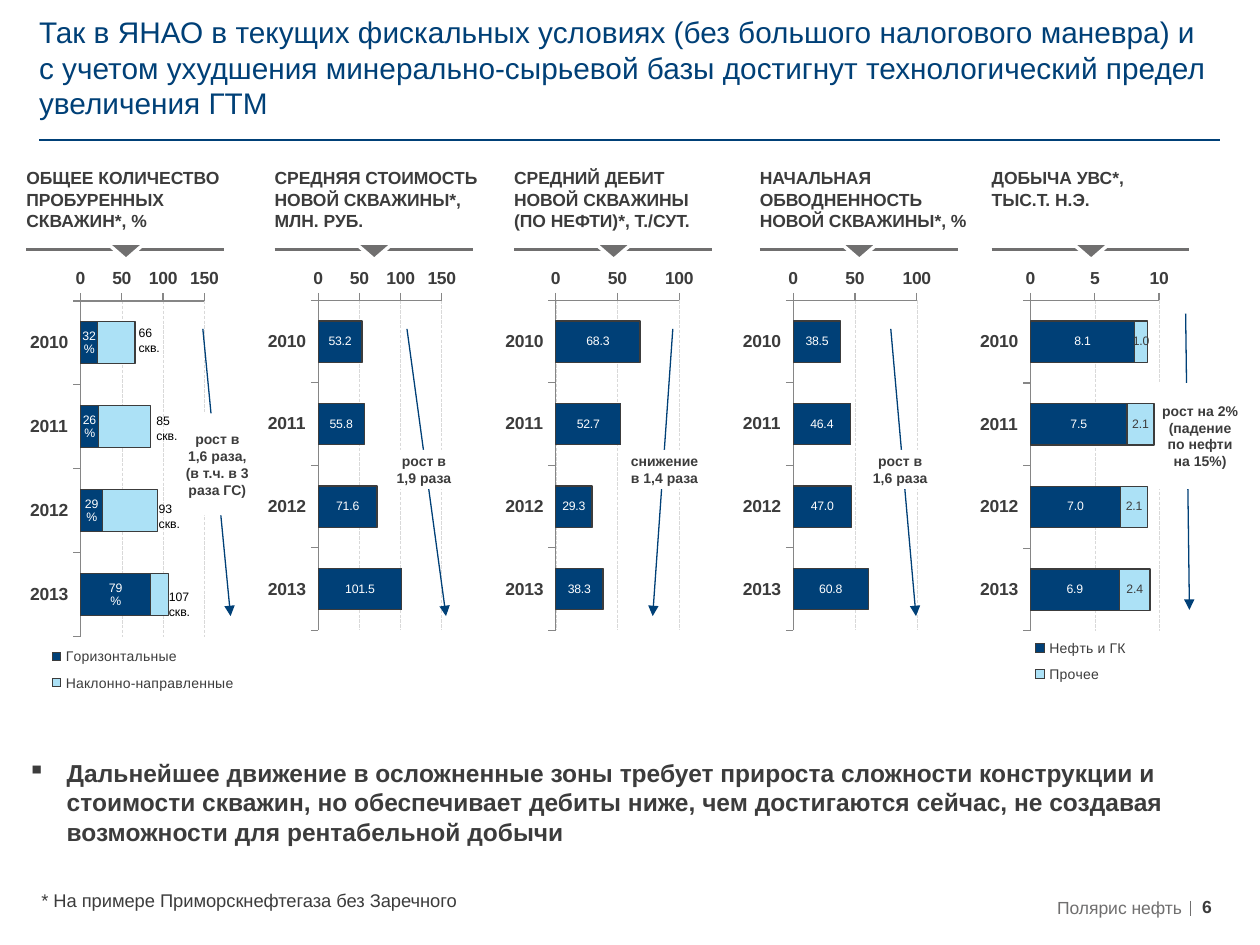
"""Build the slide on drilling results with five bar charts and a conclusion."""
from lxml.etree import SubElement
from pptx import Presentation
from pptx.chart.data import CategoryChartData
from pptx.dml.color import RGBColor
from pptx.enum.chart import XL_CHART_TYPE, XL_LEGEND_POSITION, XL_TICK_MARK
from pptx.enum.dml import MSO_LINE
from pptx.enum.shapes import MSO_CONNECTOR, MSO_SHAPE
from pptx.enum.text import MSO_ANCHOR, MSO_AUTO_SIZE, PP_ALIGN
from pptx.oxml import parse_xml
from pptx.oxml.ns import nsdecls, qn
from pptx.util import Inches, Pt

NAVY, SKY, DARK, GREY, WHITE = "004077", "ACE1F6", "3C3C3C", "706F6F", "FFFFFF"
YEARS = ["2010", "2011", "2012", "2013"]


def color(value):
    return RGBColor.from_string(value)


def write(shape, text, size=10, ink=DARK, bold=False, align=PP_ALIGN.LEFT,
          anchor=MSO_ANCHOR.TOP, margins=(0, 0)):
    frame = shape.text_frame
    frame.text = text
    frame.word_wrap = True
    frame.auto_size = MSO_AUTO_SIZE.NONE
    frame.vertical_anchor = anchor
    frame.margin_left = frame.margin_right = Inches(margins[0])
    frame.margin_top = frame.margin_bottom = Inches(margins[1])
    for paragraph in frame.paragraphs:
        paragraph.alignment = align
        for run in paragraph.runs:
            run.font.name = "Arial"
            run.font.size = Pt(size)
            run.font.bold = bold
            run.font.color.rgb = color(ink)
    return frame


panels = [
    dict(heading="ОБЩЕЕ КОЛИЧЕСТВО ПРОБУРЕННЫХ СКВАЖИН*, %", left=0.21,
         series=[("Горизонтальные", [21, 22, 27, 85]),
                 ("Наклонно-направленные", [45, 63, 66, 22])],
         shares=["32\n%", "26\n%", "29\n%", "79\n%"], maximum=150, step=50,
         plot=(0.293, 0.073, 0.556, 0.753), legend=(0.15, 0.83, 0.85, 0.14),
         arrow=(1.61, 2.61, 1.83, 4.89), box=(1.43, 3.28, 0.59, 0.81),
         trend="рост в 1,6 раза, (в т.ч. в 3 раза ГС)"),
    dict(heading="СРЕДНЯЯ СТОИМОСТЬ НОВОЙ СКВАЖИНЫ*, МЛН. РУБ.", left=2.18,
         series=[("Стоимость", [53.2, 55.8, 71.6, 101.5])], maximum=150, step=50,
         arrow=(3.23, 2.61, 3.54, 4.89), box=(3.07, 3.57, 0.59, 0.31),
         trend="рост в 1,9 раза"),
    dict(heading="СРЕДНИЙ ДЕБИТ НОВОЙ СКВАЖИНЫ (ПО НЕФТИ)*, Т./СУТ.", left=4.08,
         series=[("Дебит", [68.3, 52.7, 29.3, 38.3])], maximum=100, step=50,
         arrow=(5.34, 2.61, 5.18, 4.89), box=(4.96, 3.57, 0.63, 0.31),
         trend="снижение в 1,4 раза"),
    dict(heading="НАЧАЛЬНАЯ ОБВОДНЕННОСТЬ НОВОЙ СКВАЖИНЫ*, %", left=6.03,
         series=[("Обводненность", [38.5, 46.4, 47.0, 60.8])], maximum=100, step=50,
         arrow=(7.07, 2.61, 7.27, 4.89), box=(6.85, 3.57, 0.59, 0.31),
         trend="рост в 1,6 раза"),
    dict(heading="ДОБЫЧА УВС*,\nТЫС.Т. Н.Э.", left=7.87,
         series=[("Нефть и ГК", [8.1, 7.5, 7.0, 6.9]),
                 ("Прочее", [1.0, 2.1, 2.1, 2.4])], maximum=10, step=5,
         plot=(0.293, 0.067, 0.577, 0.745), legend=(0.27, 0.81, 0.5, 0.14),
         arrow=(9.41, 2.49, 9.44, 4.84), box=(9.17, 3.04, 0.71, 0.84),
         trend="рост на 2% (падение по нефти на 15%)"),
]

presentation = Presentation()
presentation.slide_width, presentation.slide_height = Inches(10), Inches(7.5)
slide = presentation.slides.add_slide(presentation.slide_layouts[5])
shapes = slide.shapes

title = shapes.title
title.left, title.top, title.width, title.height = map(Inches, (0.31, 0.29, 9.36, 0.67))
write(title, "Так в ЯНАО в текущих фискальных условиях (без большого налогового маневра) "
      "и с учетом ухудшения минерально-сырьевой базы достигнут технологический предел "
      "увеличения ГТМ", size=17, ink=NAVY, anchor=MSO_ANCHOR.BOTTOM)

for index, panel in enumerate(panels):
    data = CategoryChartData()
    data.categories = YEARS
    for name, values in panel["series"]:
        data.add_series(name, values)
    chart_box = map(Inches, (0.12 + 1.885 * index, 2.13, 1.77, 3.54))
    chart = shapes.add_chart(XL_CHART_TYPE.BAR_STACKED, *chart_box, data).chart
    chart.has_title = False
    chart.font.name, chart.font.size = "Arial", Pt(10)
    chart.font.color.rgb = color(DARK)

    category_axis, value_axis = chart.category_axis, chart.value_axis
    category_axis.reverse_order = True
    value_axis.minimum_scale, value_axis.maximum_scale = 0, panel["maximum"]
    value_axis.major_unit = panel["step"]
    for axis in (category_axis, value_axis):
        axis.major_tick_mark = XL_TICK_MARK.OUTSIDE
        axis.minor_tick_mark = XL_TICK_MARK.NONE
        axis.tick_labels.font.bold = True
        axis.tick_labels.font.size = Pt(10)
        axis.format.line.color.rgb = color("868686")
        axis.format.line.width = Pt(0.75)
    grid = value_axis.major_gridlines.format.line
    grid.color.rgb = color("D9D9D9")
    grid.width = Pt(0.25)
    grid.dash_style = MSO_LINE.LONG_DASH

    chart.plots[0].gap_width, chart.plots[0].overlap = 100, 100
    shares = panel.get("shares", [])
    for series, fill, ink in zip(chart.plots[0].series, (NAVY, SKY), (WHITE, DARK)):
        series.format.fill.solid()
        series.format.fill.fore_color.rgb = color(fill)
        series.format.line.color.rgb = color(DARK)
        series.format.line.width = Pt(0.75)
        if shares and fill == SKY:
            continue
        labels = series.data_labels
        labels.show_value = True
        labels.number_format, labels.number_format_is_linked = "0.0", False
        labels.font.size = Pt(7)
        labels.font.color.rgb = color(ink)
        for number, share in enumerate(shares):
            frame = series.points[number].data_label.text_frame
            frame.text = share
            for paragraph in frame.paragraphs:
                for run in paragraph.runs:
                    run.font.size = Pt(7)
                    run.font.color.rgb = color(ink)

    plot_area = chart._chartSpace.chart.plotArea
    layouts = [(plot_area, 0, panel.get("plot", (0.294, 0.067, 0.554, 0.744)))]
    chart.has_legend = "legend" in panel
    if chart.has_legend:
        chart.legend.position = XL_LEGEND_POSITION.BOTTOM
        chart.legend.include_in_layout = False
        chart.legend.font.size = Pt(8)
        layouts.append((chart.legend._element, 1, panel["legend"]))
    for element, place, numbers in layouts:
        for old in element.findall(qn("c:layout")):
            element.remove(old)
        target = '<c:layoutTarget val="inner"/>' if element is plot_area else ""
        modes = '<c:xMode val="edge"/><c:yMode val="edge"/>'
        sizes = "".join(f'<c:{key} val="{number}"/>' for key, number in zip("xywh", numbers))
        element.insert(place, parse_xml(
            f'<c:layout {nsdecls("c")}><c:manualLayout>{target}{modes}{sizes}'
            "</c:manualLayout></c:layout>"))

wells = [("66", 1.1), ("85", 1.24), ("93", 1.26), ("107", 1.34)]
for row, (count, left) in enumerate(wells):
    label = shapes.add_textbox(*map(Inches, (left, 2.58 + 0.7 * row, 0.35, 0.25)))
    write(label, f"{count}\nскв.", size=7, ink="000000")

lines = [((0.31, 1.11, 9.68, 1.11), NAVY, 1, False),
         ((9.45, 7.15, 9.45, 7.27), GREY, 0.75, False)]
for panel in panels:
    lines.append(((panel["left"], 1.98, panel["left"] + 1.57, 1.98), GREY, 2, False))
    lines.append((panel["arrow"], NAVY, 0.75, True))
for ends, ink, width, has_arrow in lines:
    connector = shapes.add_connector(MSO_CONNECTOR.STRAIGHT, *map(Inches, ends))
    connector.line.color.rgb = color(ink)
    connector.line.width = Pt(width)
    if has_arrow:
        SubElement(connector.line._get_or_add_ln(), qn("a:tailEnd"), type="triangle")
    SubElement(connector._element.spPr, qn("a:effectLst"))

for panel in panels:
    heading = shapes.add_textbox(*map(Inches, (panel["left"], 1.28, 1.65, 0.61)))
    write(heading, panel["heading"], bold=True, margins=(0, 0.05))

    marker_box = map(Inches, (panel["left"] + 0.64, 1.93, 0.3, 0.13))
    marker = shapes.add_shape(MSO_SHAPE.ISOSCELES_TRIANGLE, *marker_box)
    marker.rotation = 180
    marker.line.color.rgb = color(WHITE)
    marker.line.width = Pt(2)
    callout = shapes.add_shape(MSO_SHAPE.RECTANGLE, *map(Inches, panel["box"]))
    callout.line.fill.background()
    for shape, fill in ((marker, GREY), (callout, WHITE)):
        shape.shadow.inherit = False
        shape.fill.solid()
        shape.fill.fore_color.rgb = color(fill)
    write(callout, panel["trend"], size=8, bold=True, align=PP_ALIGN.CENTER,
          anchor=MSO_ANCHOR.MIDDLE, margins=(0.04, 0))

conclusion = shapes.add_shape(MSO_SHAPE.RECTANGLE, *map(Inches, (0.14, 5.88, 9.33, 0.97)))
conclusion.shadow.inherit = False
conclusion.fill.background()
conclusion.line.fill.background()
frame = write(conclusion, "Дальнейшее движение в осложненные зоны требует прироста сложности "
              "конструкции и стоимости скважин, но обеспечивает дебиты ниже, чем достигаются "
              "сейчас, не создавая возможности для рентабельной добычи", size=14, bold=True,
              anchor=MSO_ANCHOR.MIDDLE, margins=(0.08, 0.04))
properties = frame.paragraphs[0]._p.get_or_add_pPr()
properties.set("marL", str(Inches(0.31)))
properties.set("indent", str(-Inches(0.31)))
SubElement(properties, qn("a:buChar"), char="▪")

footnote = shapes.add_textbox(*map(Inches, (0.23, 7.01, 5, 0.29)))
write(footnote, "* На примере Приморскнефтегаза без Заречного", size=10.5, margins=(0.1, 0.05))
company = shapes.add_textbox(*map(Inches, (5.94, 7.11, 3.44, 0.18)))
write(company, "Полярис нефть", ink=GREY, align=PP_ALIGN.RIGHT, anchor=MSO_ANCHOR.MIDDLE)
page_number = shapes.add_textbox(*map(Inches, (9.54, 7.11, 0.24, 0.18)))
write(page_number, "6", bold=True)

presentation.save("out.pptx")
